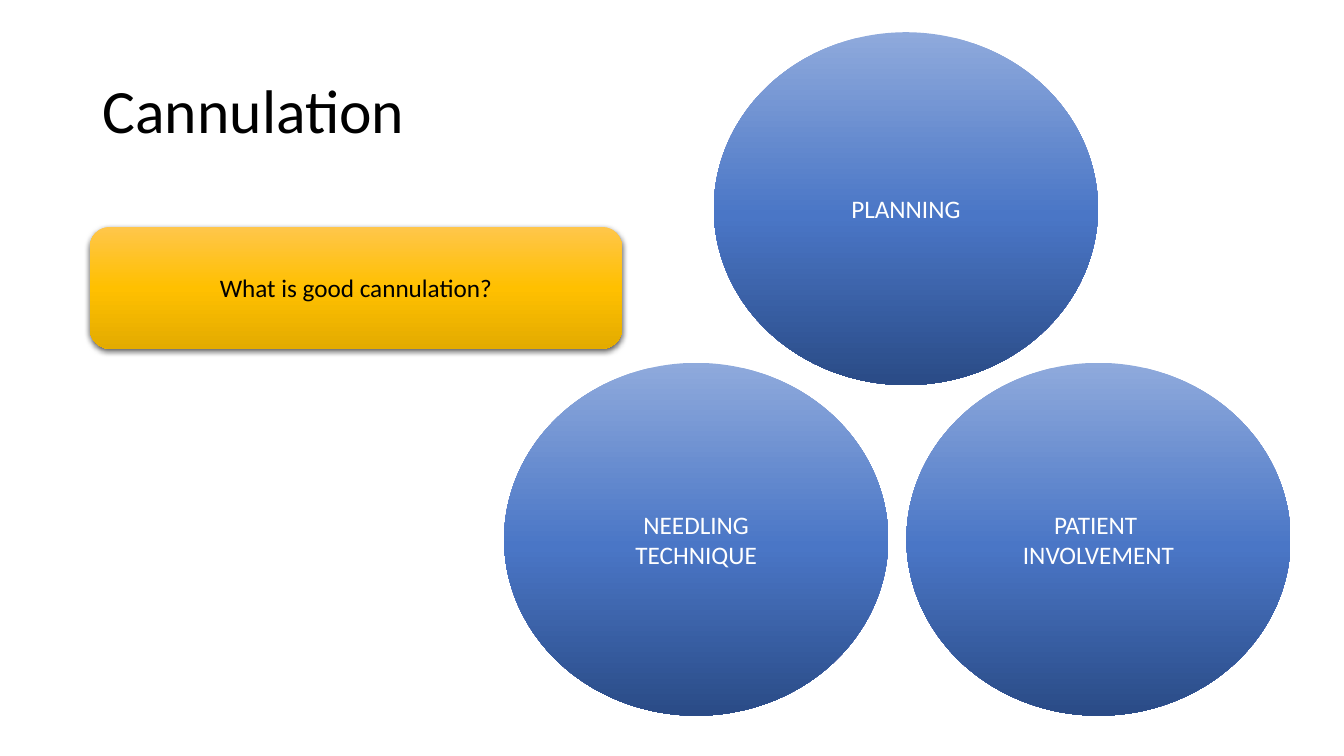
from copy import deepcopy

from lxml import etree
from pptx import Presentation
from pptx import util as u
from pptx.dml.color import RGBColor
from pptx.enum import shapes, text
from pptx.oxml import ns

BLACK = RGBColor(0x00, 0x00, 0x00)
WHITE = RGBColor(0xFF, 0xFF, 0xFF)
GOLD = (
    (0, RGBColor(0xFF, 0xC6, 0x4B)),
    (0.5, RGBColor(0xFF, 0xC0, 0x00)),
    (1, RGBColor(0xE3, 0xAB, 0x00)),
)
BLUE = (
    (0, RGBColor(0x8F, 0xAA, 0xDC)),
    (0.52, RGBColor(0x4A, 0x76, 0xC6)),
    (1, RGBColor(0x2A, 0x4B, 0x86)),
)


class CannulationSlide:
    """Holds the style and the current slide, and draws each kind of element."""

    font = "Calibri"
    title_size = u.Pt(44)
    body_size = u.Pt(18)

    def __init__(self, slide):
        self.slide = slide

    def add_lines(self, frame, lines, size, color, align):
        frame.word_wrap = True
        frame.vertical_anchor = text.MSO_ANCHOR.MIDDLE
        for index, line in enumerate(lines):
            paragraph = frame.add_paragraph() if index else frame.paragraphs[0]
            paragraph.alignment = align
            run = paragraph.add_run()
            run.text = line
            run.font.name = self.font
            run.font.size = size
            run.font.color.rgb = color

    def title(self, wording, left, top, width, height):
        box = self.slide.shapes.add_textbox(
            u.Inches(left), u.Inches(top), u.Inches(width), u.Inches(height))
        self.add_lines(box.text_frame, [wording], self.title_size, BLACK, text.PP_ALIGN.LEFT)
        box.text_frame.paragraphs[0].line_spacing = 0.9

    def gradient_shape(self, kind, lines, left, top, width, height, gradient, color):
        shape = self.slide.shapes.add_shape(
            kind, u.Inches(left), u.Inches(top), u.Inches(width), u.Inches(height))
        shape.shadow.inherit = False
        shape.line.fill.background()
        shape.fill.gradient()
        shape.fill.gradient_angle = 270
        stop_list = shape.element.spPr.find(".//" + ns.qn("a:gsLst"))
        stop_list.append(deepcopy(stop_list[-1]))
        for stop, (position, stop_color) in zip(shape.fill.gradient_stops, gradient):
            stop.position = position
            stop.color.rgb = stop_color
        self.add_lines(shape.text_frame, lines, self.body_size, color, text.PP_ALIGN.CENTER)
        return shape

    def question(self, wording, left, top, width, height):
        panel = self.gradient_shape(
            shapes.MSO_SHAPE.ROUNDED_RECTANGLE, [wording],
            left, top, width, height, GOLD, BLACK)
        effects = panel.element.spPr.find(ns.qn("a:effectLst"))
        shadow = etree.SubElement(
            effects, ns.qn("a:outerShdw"), blurRad=str(u.Pt(4.5)),
            dist=str(u.Pt(1.5)), dir="5400000", algn="ctr", rotWithShape="0")
        shade = etree.SubElement(shadow, ns.qn("a:srgbClr"), val=str(BLACK))
        etree.SubElement(shade, ns.qn("a:alpha"), val="63000")

    def circle(self, lines, left, top):
        self.gradient_shape(
            shapes.MSO_SHAPE.OVAL, lines, left, top, 3.81, 3.5, BLUE, WHITE)


def main():
    deck = Presentation()
    deck.slide_width = u.Inches(13.33)
    deck.slide_height = u.Inches(7.5)
    page = CannulationSlide(deck.slides.add_slide(deck.slide_layouts[6]))

    page.title("Cannulation", 0.92, 0.4, 11.5, 1.45)
    page.question("What is good cannulation?", 0.89, 2.25, 5.28, 1.21)
    for lines, left, top in (
        (["PLANNING"], 7.08, 0.32),
        (["NEEDLING", "TECHNIQUE"], 5, 3.6),
        (["PATIENT ", "INVOLVEMENT"], 8.99, 3.6),
    ):
        page.circle(lines, left, top)

    deck.save("out.pptx")


if __name__ == "__main__":
    main()
